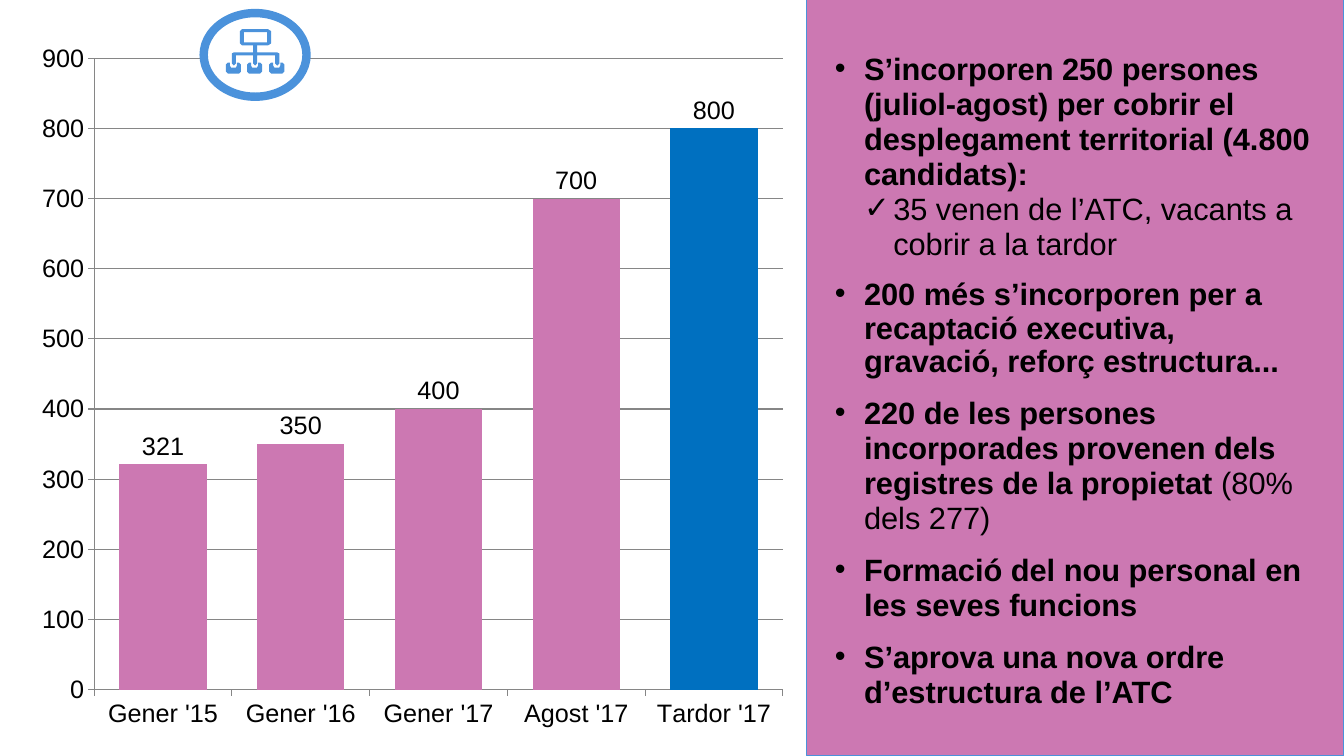
from lxml.etree import SubElement
from pptx import Presentation
from pptx.chart.data import CategoryChartData
from pptx.dml.color import RGBColor
from pptx.enum.chart import XL_CHART_TYPE, XL_LABEL_POSITION, XL_TICK_MARK
from pptx.enum.shapes import MSO_SHAPE
from pptx.enum.text import MSO_ANCHOR, PP_ALIGN
from pptx.oxml import parse_xml
from pptx.oxml.ns import nsdecls, qn
from pptx.util import Inches, Pt

FONT = "Arial"
PINK, BLUE, ICON_BLUE = "CC78B2", "0070C0", "4B92DB"
BLACK, WHITE, GRAY = "000000", "FFFFFF", "868686"

STAFF = {"Gener '15": 321, "Gener '16": 350, "Gener '17": 400,
         "Agost '17": 700, "Tardor '17": 800}
PLOT_LAYOUT = {"x": 0.092, "y": 0.031, "w": 0.868, "h": 0.894}

# bullet, left margin, line spacing, space before, runs of (text, bold)
POINTS = [
    ("•", 0.49, 25, 0, [("S’incorporen 250 persones (juliol-agost) per cobrir el "
                         "desplegament territorial (4.800 candidats):", True)]),
    ("✓", 0.78, 25, 0, [("35 venen de l’ATC, vacants a cobrir a la tardor", False)]),
    ("•", 0.49, 24, 12, [("200 més s’incorporen per a recaptació executiva, gravació, "
                          "reforç estructura...", True)]),
    ("•", 0.49, 25, 12, [("220 de les persones incorporades provenen dels registres "
                          "de la propietat ", True), ("(80% dels 277)", False)]),
    ("•", 0.49, 25, 12, [("Formació del nou personal en les seves funcions", True)]),
    ("•", 0.49, 25, 12, [("S’aprova una nova ordre d’estructura de l’ATC", True)]),
]

ICON_UNIT = Inches(0.01)
BOX_OUTER = [(240, 29), (266, 29), (269, 31), (269, 43), (266, 45),
             (240, 45), (238, 43), (238, 31)]
BOX_INNER = [(242, 32), (242, 42), (265, 42), (265, 32)]
BRANCHES = [(251, 43), (255, 43), (255, 52), (275, 52), (277, 53), (277, 63),
            (275, 65), (273, 63), (273, 55), (255, 55), (255, 63), (253, 65),
            (251, 63), (251, 55), (234, 55), (234, 63), (232, 65), (230, 63),
            (230, 53), (232, 52), (251, 52)]
TRAY = [(13, 0), (11, 0), (11, 3), (10, 5), (8, 5), (5, 5), (4, 3), (4, 0),
        (2, 0), (0, 2), (0, 9), (2, 11), (13, 11), (15, 9), (15, 2)]
TRAY_LEFTS, TRAY_TOP = (224, 245, 267), 62


def color(value):
    return RGBColor.from_string(value)


def paint(shape, fill, line=None, width=0):
    shape.shadow.inherit = False
    shape.fill.solid()
    shape.fill.fore_color.rgb = color(fill)
    if line:
        shape.line.color.rgb = color(line)
        shape.line.width = Pt(width)
    else:
        shape.line.fill.background()


def set_plot_layout(chart):
    plot_area = chart.element.find(".//" + qn("c:plotArea"))
    for layout in plot_area.findall(qn("c:layout")):
        plot_area.remove(layout)
    sizes = "".join(f'<c:{name} val="{value}"/>' for name, value in PLOT_LAYOUT.items())
    plot_area.insert(0, parse_xml(
        f'<c:layout {nsdecls("c")}><c:manualLayout><c:layoutTarget val="inner"/>'
        f'<c:xMode val="edge"/><c:yMode val="edge"/>{sizes}</c:manualLayout></c:layout>'))


def add_staff_chart(slide):
    data = CategoryChartData()
    data.categories = list(STAFF)
    data.add_series("Series 1", list(STAFF.values()))
    chart = slide.shapes.add_chart(
        XL_CHART_TYPE.COLUMN_CLUSTERED, Inches(0.21), Inches(0.36),
        Inches(7.87), Inches(7.01), data).chart
    chart.has_title = False
    chart.has_legend = False
    chart.font.name = FONT
    chart.font.size = Pt(18)
    chart.font.color.rgb = color(BLACK)

    value_axis = chart.value_axis
    value_axis.minimum_scale, value_axis.maximum_scale = 0, 900
    value_axis.major_unit = 100
    value_axis.has_major_gridlines = True
    value_axis.major_gridlines.format.line.color.rgb = color(GRAY)
    for axis in (value_axis, chart.category_axis):
        axis.major_tick_mark = XL_TICK_MARK.OUTSIDE
        axis.format.line.color.rgb = color(GRAY)

    plot = chart.plots[0]
    plot.gap_width = 58
    plot.vary_by_categories = False
    plot.has_data_labels = True
    plot.data_labels.show_value = True
    plot.data_labels.position = XL_LABEL_POSITION.OUTSIDE_END
    series = plot.series[0]
    last_column = series.points[len(STAFF) - 1]
    for item, fill in ((series, PINK), (last_column, BLUE)):
        item.format.fill.solid()
        item.format.fill.fore_color.rgb = color(fill)
    set_plot_layout(chart)


def add_point(paragraph, bullet, margin, line_spacing, space_before, runs):
    paragraph.alignment = PP_ALIGN.LEFT
    paragraph.line_spacing = Pt(line_spacing)
    paragraph.space_before = Pt(space_before)
    paragraph.level = 1 if bullet == "✓" else 0
    properties = paragraph._p.get_or_add_pPr()
    properties.set("marL", str(Inches(margin)))
    properties.set("indent", str(Inches(-0.29)))
    SubElement(properties, qn("a:buFont"), typeface=FONT)
    SubElement(properties, qn("a:buChar"), char=bullet)
    for text, bold in runs:
        run = paragraph.add_run()
        run.text = text
        run.font.name = FONT
        run.font.size = Pt(22)
        run.font.bold = bold
        run.font.color.rgb = color(BLACK)


def add_panel(slide):
    panel = slide.shapes.add_shape(
        MSO_SHAPE.RECTANGLE, Inches(8), 0, Inches(5.33), Inches(7.5))
    paint(panel, PINK, ICON_BLUE, 0.75)
    frame = panel.text_frame
    frame.word_wrap = True
    frame.vertical_anchor = MSO_ANCHOR.TOP
    frame.margin_left = frame.margin_bottom = Inches(0.08)
    frame.margin_right = Inches(0.28)
    frame.margin_top = Inches(0.51)
    for index, point in enumerate(POINTS):
        paragraph = frame.add_paragraph() if index else frame.paragraphs[0]
        add_point(paragraph, *point)


def add_outline(shapes, *contours):
    first, *others = contours
    builder = shapes.build_freeform(*first[0], scale=ICON_UNIT)
    builder.add_line_segments(first[1:], close=True)
    for contour in others:
        builder.move_to(*contour[0])
        builder.add_line_segments(contour[1:], close=True)
    paint(builder.convert_to_shape(), ICON_BLUE)


def add_structure_icon(slide):
    shapes = slide.shapes.add_group_shape().shapes
    ring = shapes.add_shape(
        MSO_SHAPE.OVAL, Inches(2.02), Inches(0.13), Inches(1.02), Inches(0.83))
    paint(ring, WHITE, ICON_BLUE, 6)
    add_outline(shapes, BOX_OUTER, BOX_INNER)
    for left in TRAY_LEFTS:
        add_outline(shapes, [(left + x, TRAY_TOP + y) for x, y in TRAY])
    add_outline(shapes, BRANCHES)


def main():
    presentation = Presentation()
    presentation.slide_width = Inches(13.33)
    presentation.slide_height = Inches(7.5)
    slide = presentation.slides.add_slide(presentation.slide_layouts[6])
    add_staff_chart(slide)
    add_panel(slide)
    add_structure_icon(slide)
    presentation.save("out.pptx")


if __name__ == "__main__":
    main()
